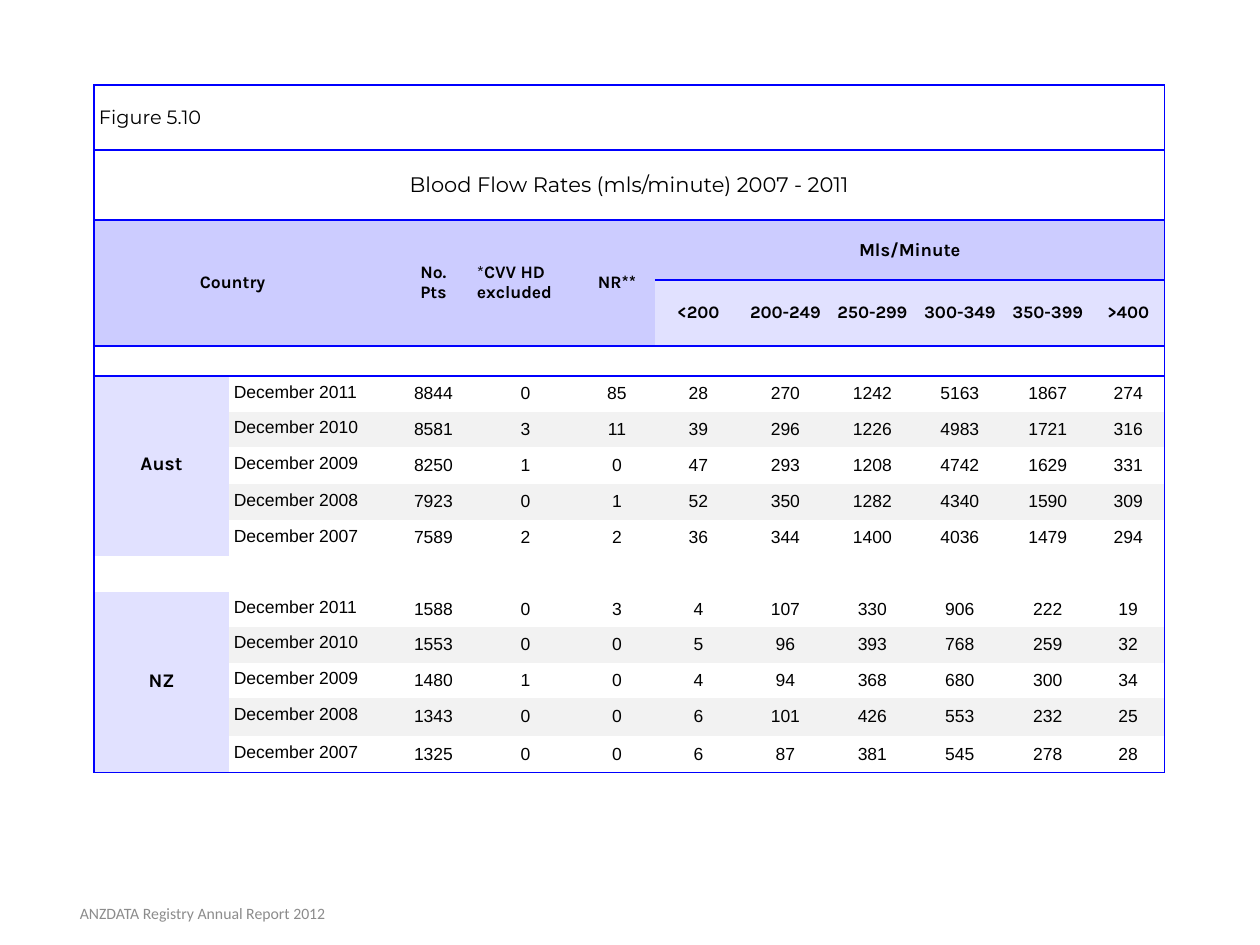
import pptx
import pptx.dml.color
import pptx.enum.text
import pptx.oxml.ns
import pptx.util
from lxml import etree

SCALE = 914400 / 126
ALIGN = pptx.enum.text.PP_ALIGN
MIDDLE = pptx.enum.text.MSO_ANCHOR.MIDDLE
PLAIN_STYLE = "{2D5ABB26-0587-4C30-8999-92F81FD0307C}"

COLS = [135, 166, 77, 107, 76, 87, 87, 87, 88, 88, 73]
ROWS = [65, 70, 60, 66, 30, 36, 35, 37, 36, 36, 36, 35, 36, 35, 38, 37]
RULES = {0, 1, 2, 3, 4, 16}
RATES = ["<200", "200-249", "250-299", "300-349", "350-399", ">400"]
RATE_COL = 5
BLUE, HEAD, PALE, BAND = "0000FF", "CCCCFF", "E1E1FF", "F2F2F2"

FLOWS = {
    "Aust": [
        [8844, 0, 85, 28, 270, 1242, 5163, 1867, 274],
        [8581, 3, 11, 39, 296, 1226, 4983, 1721, 316],
        [8250, 1, 0, 47, 293, 1208, 4742, 1629, 331],
        [7923, 0, 1, 52, 350, 1282, 4340, 1590, 309],
        [7589, 2, 2, 36, 344, 1400, 4036, 1479, 294],
    ],
    "NZ": [
        [1588, 0, 3, 4, 107, 330, 906, 222, 19],
        [1553, 0, 0, 5, 96, 393, 768, 259, 32],
        [1480, 1, 0, 4, 94, 368, 680, 300, 34],
        [1343, 0, 0, 6, 101, 426, 553, 232, 25],
        [1325, 0, 0, 6, 87, 381, 545, 278, 28],
    ],
}


def px(n):
    return round(n * SCALE)


def rgb(code):
    return pptx.dml.color.RGBColor.from_string(code)


def style(run, font, size, bold=False, color="000000"):
    run.font.name = font
    run.font.size = pptx.util.Pt(size)
    run.font.bold = bold
    run.font.color.rgb = rgb(color)


def write(cell, text, font, size, bold=False, align=ALIGN.CENTER,
          after=None, lead=None):
    cell.text_frame.text = str(text)
    for para in cell.text_frame.paragraphs:
        para.alignment = align
        if after:
            para.space_after = pptx.util.Pt(after)
        if lead:
            para.line_spacing = lead
        for run in para.runs:
            style(run, font, size, bold)


def paint(cell, color):
    cell.fill.solid()
    cell.fill.fore_color.rgb = rgb(color)


def edge(cell, side):
    """Draw one blue border; side is L, R, T or B."""
    qn = pptx.oxml.ns.qn
    props = cell._tc.get_or_add_tcPr()
    line = etree.SubElement(props, qn("a:ln" + side), w="12700")
    fill = etree.SubElement(line, qn("a:solidFill"))
    etree.SubElement(fill, qn("a:srgbClr"), val=BLUE)


def ruled(row, col):
    return row in RULES and (row != 3 or col >= RATE_COL)


def prepare(table):
    """Give every cell its margins, borders and an empty fill."""
    for r in range(len(ROWS)):
        for c in range(len(COLS)):
            cell = table.cell(r, c)
            tall = cell.span_height if cell.is_merge_origin else 1
            wide = cell.span_width if cell.is_merge_origin else 1
            cell.margin_left = cell.margin_right = px(5)
            cell.margin_top = cell.margin_bottom = px(3)
            cell.vertical_anchor = MIDDLE
            sides = {"L": c == 0, "R": c + wide == len(COLS),
                     "T": ruled(r, c), "B": ruled(r + tall, c)}
            for side, drawn in sides.items():
                if drawn:
                    edge(cell, side)
            cell.fill.background()
            para = cell.text_frame.paragraphs[0]
            etree.SubElement(para._p, pptx.oxml.ns.qn("a:endParaRPr"), sz="1000")


def merge(table, row, col, tall, wide):
    table.cell(row, col).merge(table.cell(row + tall - 1, col + wide - 1))


def add_grid(slide):
    frame = slide.shapes.add_table(len(ROWS), len(COLS), px(94), px(85),
                                   px(sum(COLS)), px(sum(ROWS)))
    table = frame.table
    table.first_row = table.horz_banding = False
    table._tbl.tblPr.find(pptx.oxml.ns.qn("a:tableStyleId")).text = PLAIN_STYLE
    for col, width in zip(table.columns, COLS):
        col.width = px(width)
    for row, height in zip(table.rows, ROWS):
        row.height = px(height)
    for span in [(0, 0, 1, 11), (1, 0, 1, 11), (2, 0, 2, 2), (2, 2, 2, 1),
                 (2, 3, 2, 1), (2, 4, 2, 1), (2, 5, 1, 6),
                 (5, 0, 5, 1), (11, 0, 5, 1)]:
        merge(table, *span)
    prepare(table)
    return table


def fill_head(table):
    write(table.cell(0, 0), "Figure 5.10", "Montserrat", 11, align=ALIGN.LEFT)
    write(table.cell(1, 0), "Blood Flow Rates (mls/minute) 2007 - 2011",
          "Montserrat", 12)
    heads = {0: "Country", 2: "No.\nPts", 4: "NR**", RATE_COL: "Mls/Minute"}
    for col, text in heads.items():
        size = 10.5 if col == RATE_COL else 10
        write(table.cell(2, col), text, "Karla", size, True)
        paint(table.cell(2, col), HEAD)
    table.cell(2, 0).margin_right = px(29)

    note = table.cell(2, 3)
    write(note, "*", "Karla", 10, align=ALIGN.LEFT, after=14)
    run = note.text_frame.paragraphs[0].add_run()
    run.text = "CVV HD excluded"
    style(run, "Karla", 10, True)
    paint(note, HEAD)

    for col, text in enumerate(RATES, RATE_COL):
        write(table.cell(3, col), text, "Karla", 10, True)
        paint(table.cell(3, col), PALE)


def fill_land(table, top, name, flows):
    write(table.cell(top, 0), name, "Karla", 11, True, lead=0.75)
    paint(table.cell(top, 0), PALE)
    for i, values in enumerate(flows):
        row = top + i
        write(table.cell(row, 1), f"December {2011 - i}", "Arial", 10,
              align=ALIGN.LEFT, lead=0.75)
        for col, value in enumerate(values, 2):
            write(table.cell(row, col), value, "Arial", 10, after=14)
        if i % 2:
            for col in range(1, len(COLS)):
                paint(table.cell(row, col), BAND)


def add_foot(slide, text):
    frame = slide.shapes.add_textbox(px(3), px(888), px(399), px(50)).text_frame
    frame.word_wrap = True
    frame.vertical_anchor = MIDDLE
    frame.text = text
    para = frame.paragraphs[0]
    para.alignment = ALIGN.CENTER
    style(para.runs[0], "Calibri", 9, color="8C8C8C")


def main():
    deck = pptx.Presentation()
    deck.slide_width, deck.slide_height = px(1260), px(945)
    slide = deck.slides.add_slide(deck.slide_layouts[6])
    table = add_grid(slide)
    fill_head(table)
    for top, (name, flows) in zip((5, 11), FLOWS.items()):
        fill_land(table, top, name, flows)
    add_foot(slide, "ANZDATA Registry Annual Report 2012")
    deck.save("out.pptx")


if __name__ == "__main__":
    main()
